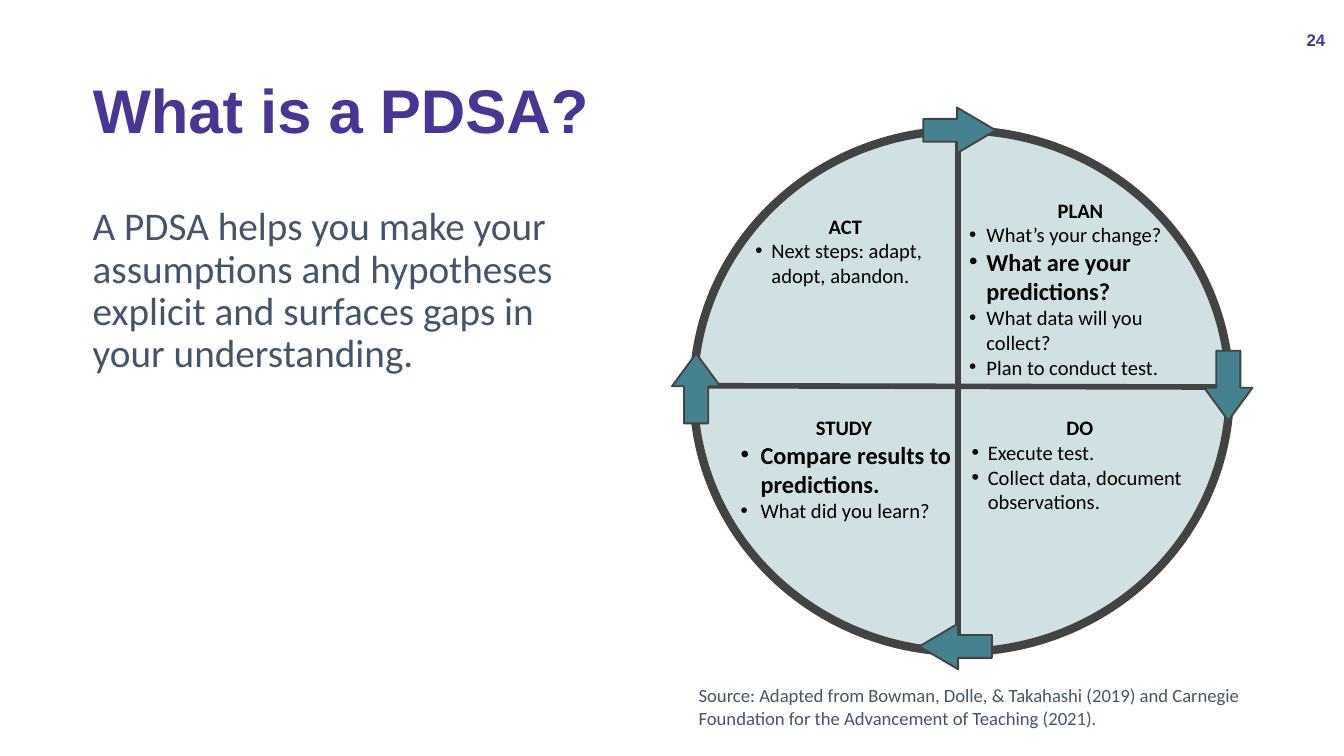
from dataclasses import dataclass

import pptx
import pptx.dml.color
import pptx.enum.shapes
import pptx.enum.text
import pptx.oxml.ns
import pptx.util
from lxml import etree

Inches = pptx.util.Inches
Pt = pptx.util.Pt
Align = pptx.enum.text.PP_ALIGN
Anchor = pptx.enum.text.MSO_ANCHOR
Shape = pptx.enum.shapes.MSO_SHAPE
qn = pptx.oxml.ns.qn

COLORS = {
    "title": "483692",
    "body": "44546A",
    "text": "000000",
    "disc": "D0E0E3",
    "arrow": "45818E",
    "outline": "434343",
}
Box = tuple[float, float, float, float]  # left, top, width, height
INSETS = (0.07, 0.04, 0.07, 0.04)
FLUSH_LEFT = (0, 0.04, 0.07, 0.04)


@dataclass
class Label:
    text: str
    box: Box
    size: float
    color: str
    font: str = "Calibri"
    bold: bool = False
    align: Align = Align.LEFT
    anchor: Anchor = Anchor.TOP
    insets: Box = INSETS
    spacing: float = 1.0


@dataclass
class Stage:
    heading: str
    box: Box
    indent: float
    hanging: float
    bullets: list[tuple[str, bool]]  # wording, emphasised
    bullet_size: int = 100


@dataclass
class Arrow:
    kind: Shape
    box: Box
    head: float


LABELS = [
    Label("A PDSA helps you make your assumptions and hypotheses explicit "
          "and surfaces gaps in your understanding.",
          (0.69, 1.5, 3.8, 3.57), 21, "body", insets=FLUSH_LEFT, spacing=0.9),
    Label("What is a PDSA?", (0.69, 0.3, 8.62, 1.09), 33, "title", "Arial", True,
          anchor=Anchor.MIDDLE, insets=FLUSH_LEFT, spacing=0.9),
    Label("Source: Adapted from Bowman, Dolle, & Takahashi (2019) and Carnegie "
          "Foundation for the Advancement of Teaching (2021).",
          (5.1, 4.99, 4.41, 0.52), 10, "body", insets=(0.1, 0.1, 0.1, 0.1)),
    Label("24", (9.51, 0.15, 0.42, 0.3), 9, "title", "Arial", True,
          Align.RIGHT, Anchor.MIDDLE),
]

STAGES = [
    Stage("PLAN", (7.14, 1.43, 1.8, 1.51), 0.13, 0.13, [
        ("What’s your change?", False),
        ("What are your predictions?", True),
        ("What data will you collect?", False),
        ("Plan to conduct test.", False),
    ]),
    Stage("DO", (7.02, 3.05, 2.03, 1.19), 0.26, 0.12, [
        ("Execute test.", False),
        ("Collect data, document observations.", False),
    ], bullet_size=105),
    Stage("STUDY", (5.4, 3.05, 1.76, 1.19), 0.19, 0.15, [
        ("Compare results to predictions.", True),
        ("What did you learn?", False),
    ]),
    Stage("ACT", (5.54, 1.55, 1.5, 1.22), 0.13, 0.12, [
        ("Next steps: adapt, adopt, abandon.", False),
    ]),
]

DISC = (5.16, 0.97, 3.99, 3.88)
DIVIDERS = [(7.13, 0.89, 7.13, 4.83), (5.16, 2.87, 9.08, 2.88)]
ARROWS = [
    Arrow(Shape.RIGHT_ARROW, (6.87, 0.8, 0.54, 0.34), 0.85),
    Arrow(Shape.LEFT_ARROW, (6.84, 4.64, 0.54, 0.34), 0.85),
    Arrow(Shape.DOWN_ARROW, (8.96, 2.61, 0.36, 0.52), 0.68),
    Arrow(Shape.UP_ARROW, (5, 2.63, 0.36, 0.52), 0.68),
]


def rgb(name: str) -> pptx.dml.color.RGBColor:
    return pptx.dml.color.RGBColor.from_string(COLORS[name])


def add_box(s, box: Box, insets: Box = INSETS, anchor: Anchor = Anchor.TOP):
    tf = s.shapes.add_textbox(*map(Inches, box)).text_frame
    tf.word_wrap = True
    tf.vertical_anchor = anchor
    tf.margin_left, tf.margin_top, tf.margin_right, tf.margin_bottom = map(Inches, insets)
    return tf


def write(p, text: str, size: float, color: str, font: str, bold: bool) -> None:
    p.text = text
    f = p.runs[0].font
    f.name, f.size, f.bold = font, Pt(size), bold
    f.color.rgb = rgb(color)


def add_label(s, label: Label) -> None:
    p = add_box(s, label.box, label.insets, label.anchor).paragraphs[0]
    p.alignment, p.line_spacing = label.align, label.spacing
    write(p, label.text, label.size, label.color, label.font, label.bold)


def set_bullet(p, stage: Stage) -> None:
    pPr = p._p.get_or_add_pPr()
    pPr.set("marL", str(Inches(stage.indent)))
    pPr.set("indent", str(-Inches(stage.hanging)))
    color = etree.SubElement(pPr, qn("a:buClr"))
    etree.SubElement(color, qn("a:srgbClr"), val=COLORS["text"])
    etree.SubElement(pPr, qn("a:buSzPct"), val=str(stage.bullet_size * 1000))
    etree.SubElement(pPr, qn("a:buFont"), typeface="Arial")
    etree.SubElement(pPr, qn("a:buChar"), char="•")


def add_stage(s, stage: Stage) -> None:
    tf = add_box(s, stage.box)
    p = tf.paragraphs[0]
    p.alignment = Align.CENTER
    write(p, stage.heading, 11, "text", "Calibri", True)
    for text, strong in stage.bullets:
        p = tf.add_paragraph()
        set_bullet(p, stage)
        write(p, text, 13 if strong else 11, "text", "Calibri", strong)


def add_filled(s, kind: Shape, box: Box, fill: str, width: float):
    sp = s.shapes.add_shape(kind, *map(Inches, box))
    sp.shadow.inherit = False
    sp.fill.solid()
    sp.fill.fore_color.rgb = rgb(fill)
    sp.line.color.rgb = rgb("outline")
    sp.line.width = Pt(width)
    return sp


def add_divider(s, ends: Box) -> None:
    line = s.shapes.add_connector(pptx.enum.shapes.MSO_CONNECTOR.STRAIGHT, *map(Inches, ends))
    line.line.color.rgb = rgb("outline")
    line.line.width = Pt(3)
    etree.SubElement(line._element.spPr, qn("a:effectLst"))


def main() -> None:
    prs = pptx.Presentation()
    prs.slide_width = Inches(10)
    prs.slide_height = Inches(10 * 9 / 16)  # widescreen
    s = prs.slides.add_slide(prs.slide_layouts[6])

    # Title, explanation, source and page number
    for label in LABELS:
        add_label(s, label)

    # Cycle: disc, dividers and arrows around the rim
    add_filled(s, Shape.OVAL, DISC, "disc", 4.5)
    for ends in DIVIDERS:
        add_divider(s, ends)
    for arrow in ARROWS:
        sp = add_filled(s, arrow.kind, arrow.box, "arrow", 1)
        sp.adjustments[0], sp.adjustments[1] = 0.5, arrow.head

    # Text of the four stages
    for stage in STAGES:
        add_stage(s, stage)

    prs.save("out.pptx")


if __name__ == "__main__":
    main()
